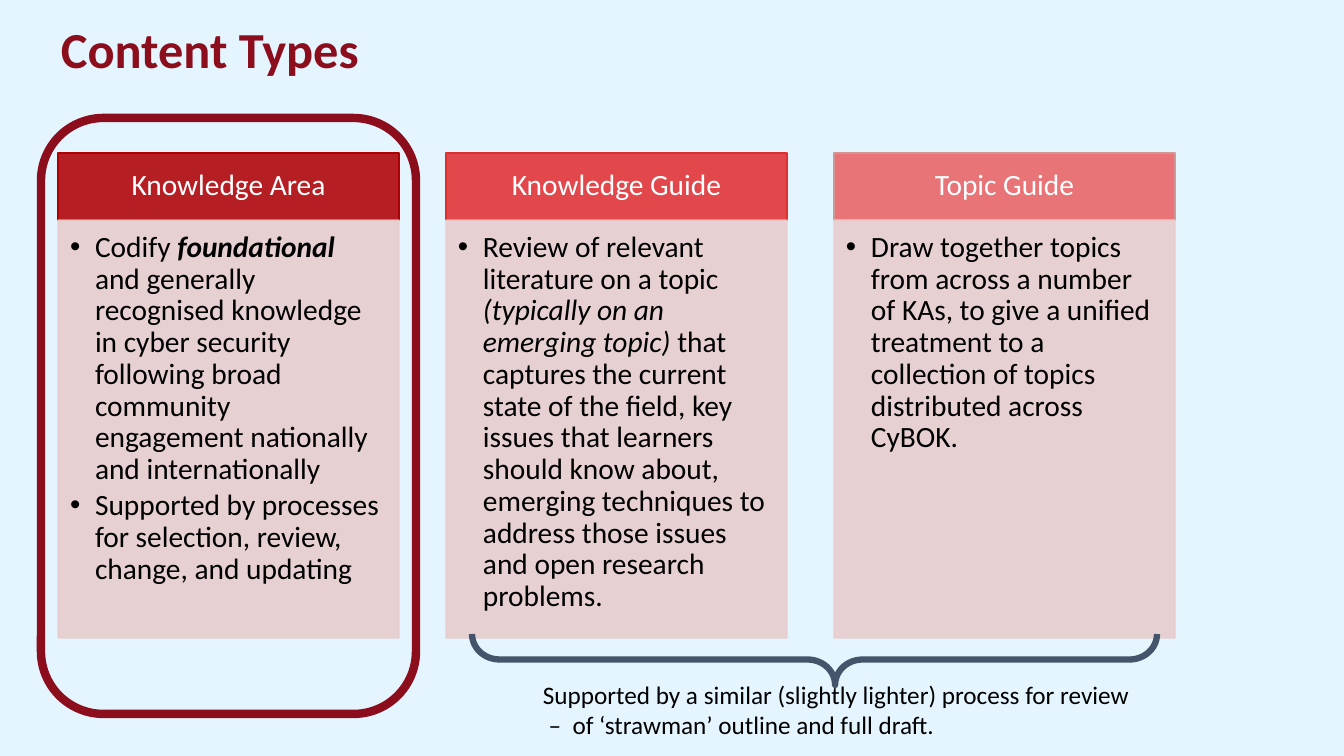
from dataclasses import dataclass

from lxml.etree import SubElement
from pptx import Presentation
from pptx.dml.color import RGBColor
from pptx.enum.shapes import MSO_SHAPE as Preset
from pptx.enum.text import MSO_ANCHOR as Anchor, PP_ALIGN as Align
from pptx.oxml.ns import qn
from pptx.util import Emu, Pt

EMU_PER_PX = 914400 / 100.8


@dataclass(frozen=True)
class Theme:
    font: str = "Calibri"
    background: str = "E4F5FF"
    accent: str = "8C0E1D"
    card: str = "E8CCCC"
    card_opacity: int = 90
    brace: str = "44546A"
    ink: str = "000000"
    white: str = "FFFFFF"
    title_size: int = 36
    card_size: int = 21
    caption_size: int = 18


THEME = Theme()

CARDS = [
    ("Knowledge Area", "B51E23", "AE0000", [
        [("Codify ", ""), ("foundational", "bi"),
         (" and generally recognised knowledge in cyber security following "
          "broad community engagement nationally and internationally", "")],
        [("Supported by processes for selection, review, change, and updating", "")],
    ]),
    ("Knowledge Guide", "E1474B", "DD3030", [
        [("Review of relevant literature on a topic ", ""),
         ("(typically on an emerging topic) ", "i"),
         ("that captures the current state of the field, key issues that learners "
          "should know about, emerging techniques to address those issues and "
          "open research problems.", "")],
    ]),
    ("Topic Guide", "E87477", "D69595", [
        [("Draw together topics from across a number of KAs, to give a unified "
          "treatment to a collection of topics distributed across CyBOK.", "")],
    ]),
]
CARD_LEFT, CARD_STEP, CARD_WIDTH = 58, 388, 341
HEADER_TOP, HEADER_HEIGHT, BODY_HEIGHT = 153, 67, 418


def px(value):
    return Emu(round(value * EMU_PER_PX))


def rgb(color):
    return RGBColor.from_string(color)


def set_margins(frame, left, top, right, bottom):
    frame.margin_left, frame.margin_top = px(left), px(top)
    frame.margin_right, frame.margin_bottom = px(right), px(bottom)


def add_run(paragraph, text, size, color, style=""):
    run = paragraph.add_run()
    run.text = text
    run.font.name = THEME.font
    run.font.size = Pt(size)
    run.font.color.rgb = rgb(color)
    run.font.bold = "b" in style
    run.font.italic = "i" in style


def add_shape(slide, preset, box, line, line_width, fill=None):
    shape = slide.shapes.add_shape(preset, *map(px, box))
    shape.shadow.inherit = False
    if fill:
        shape.fill.solid()
        shape.fill.fore_color.rgb = rgb(fill)
    else:
        shape.fill.background()
    shape.line.color.rgb = rgb(line)
    shape.line.width = Pt(line_width)
    return shape


def add_text(slide, box, lines, size, color, style="", wrap=True, anchor=Anchor.TOP):
    frame = slide.shapes.add_textbox(*map(px, box)).text_frame
    frame.word_wrap = wrap
    frame.vertical_anchor = anchor
    for index, line in enumerate(lines):
        paragraph = frame.add_paragraph() if index else frame.paragraphs[0]
        add_run(paragraph, line, size, color, style)
    return frame


def make_translucent(shape):
    for color in shape._element.spPr.iter(qn("a:srgbClr")):
        SubElement(color, qn("a:alpha"), val=str(THEME.card_opacity * 1000))


def make_bullet(paragraph):
    indent = px(25)
    properties = paragraph._p.get_or_add_pPr()
    properties.set("marL", str(indent))
    properties.set("indent", str(-indent))
    SubElement(properties, qn("a:buFont"), typeface="Arial")
    SubElement(properties, qn("a:buChar"), char="•")


def add_header(slide, left, label, fill, line):
    box = (left, HEADER_TOP, CARD_WIDTH, HEADER_HEIGHT)
    frame = add_shape(slide, Preset.RECTANGLE, box, line, 1, fill).text_frame
    frame.word_wrap = True
    frame.vertical_anchor = Anchor.MIDDLE
    set_margins(frame, 16, 9, 16, 9)
    paragraph = frame.paragraphs[0]
    paragraph.alignment = Align.CENTER
    paragraph.line_spacing = 0.9
    add_run(paragraph, label, THEME.card_size, THEME.white)


def add_body(slide, left, bullets):
    box = (left, HEADER_TOP + HEADER_HEIGHT, CARD_WIDTH, BODY_HEIGHT)
    shape = add_shape(slide, Preset.RECTANGLE, box, THEME.card, 1, THEME.card)
    make_translucent(shape)
    frame = shape.text_frame
    frame.word_wrap = True
    frame.vertical_anchor = Anchor.TOP
    set_margins(frame, 12, 12, 16, 18)
    for index, runs in enumerate(bullets):
        paragraph = frame.add_paragraph() if index else frame.paragraphs[0]
        make_bullet(paragraph)
        paragraph.alignment = Align.LEFT
        paragraph.line_spacing = 0.9
        paragraph.space_after = Pt(3)
        for text, style in runs:
            add_run(paragraph, text, THEME.card_size, THEME.ink, style)


def add_brace(slide):
    brace = add_shape(slide, Preset.RIGHT_BRACE, (789, 317, 51, 685), THEME.brace, 4.5)
    brace.rotation = 90
    brace.adjustments[0] = 0.54
    brace.adjustments[1] = 0.47


def main():
    presentation = Presentation()
    presentation.slide_width, presentation.slide_height = px(1344), px(756)
    slide = presentation.slides.add_slide(presentation.slide_layouts[6])
    slide.background.fill.solid()
    slide.background.fill.fore_color.rgb = rgb(THEME.background)

    title = add_text(slide, (51, -9, 995, 127), ["Content Types"],
                     THEME.title_size, THEME.accent, "b", anchor=Anchor.MIDDLE)
    title.paragraphs[0].line_spacing = Pt(35)

    for index, (label, fill, line, bullets) in enumerate(CARDS):
        left = CARD_LEFT + index * CARD_STEP
        add_header(slide, left, label, fill, line)
        add_body(slide, left, bullets)

    add_shape(slide, Preset.ROUNDED_RECTANGLE, (41, 118, 375, 596), THEME.accent, 6)
    add_brace(slide)
    add_text(slide, (533, 674, 613, 72),
             ["Supported by a similar (slightly lighter) process for review",
              " –  of ‘strawman’ outline and full draft."],
             THEME.caption_size, THEME.ink, wrap=False)
    presentation.save("out.pptx")


if __name__ == "__main__":
    main()
